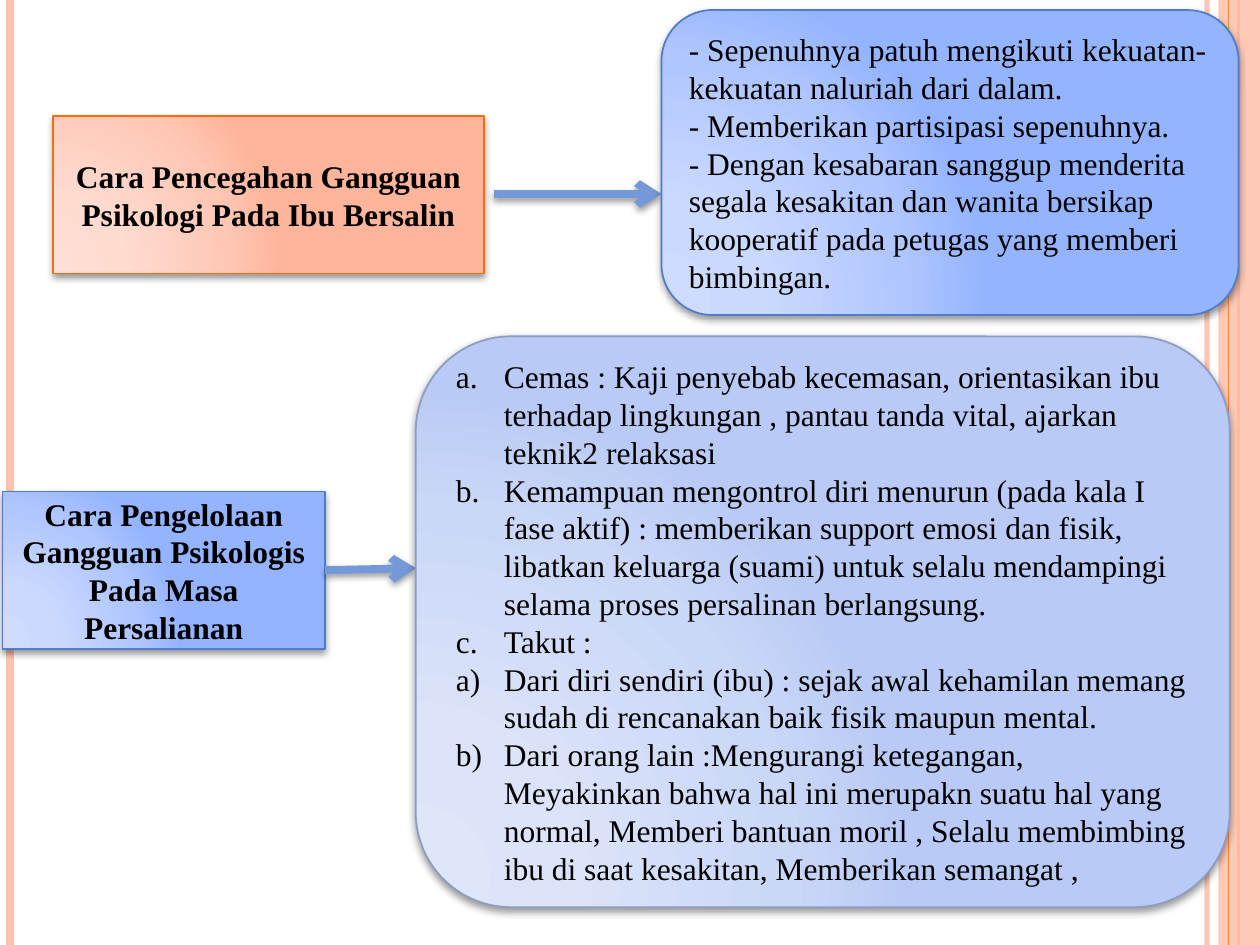
from lxml import etree
from pptx import Presentation, util as u
from pptx.dml.color import RGBColor
from pptx.enum import shapes, text
from pptx.oxml import parse_xml
from pptx.oxml.ns import nsdecls, qn

FONT = "Times New Roman"
COLORS = {"text": "000000", "stripe": "FEC3AE", "rule": "FE8637", "arrow": "7598D9"}
STOPS = (0, 30, 75, 100)
STYLES = {  # gradient colours, outline
    "orange": (("FFDED5", "FFDBD0", "FFC8B6", "FFB59B"), "FF6B0A"),
    "blue": (("CFDCFF", "CBD9FF", "AFC6FF", "95B4FF"), "4F7CCF"),
    "pale": (("DEE6FA", "DBE4F9", "CAD7F7", "B8CAF5"), "8D9CBF"),
}
RULES = [  # x, colour, width, opacity
    (9.58, "stripe", 3, 93),
    (0.08, "stripe", 4.5, 100),
    (9.83, "rule", 1.5, 100),
]
EDGE_RULE = (9.75, "rule", 0.75, 100)

PREVENTION = "Cara Pencegahan Gangguan Psikologi Pada Ibu Bersalin"
MANAGEMENT = "Cara Pengelolaan Gangguan Psikologis Pada Masa Persalianan"
PREVENTION_STEPS = [
    "- Sepenuhnya patuh mengikuti kekuatan-kekuatan naluriah dari dalam.",
    "- Memberikan partisipasi sepenuhnya.",
    "- Dengan kesabaran sanggup menderita segala kesakitan dan wanita bersikap "
    "kooperatif pada petugas yang memberi bimbingan.",
]
LETTERED = [
    "Cemas : Kaji penyebab kecemasan, orientasikan ibu terhadap lingkungan , "
    "pantau tanda vital, ajarkan teknik2 relaksasi",
    "Kemampuan mengontrol diri menurun (pada kala I fase aktif) : memberikan "
    "support emosi dan fisik, libatkan keluarga (suami) untuk selalu mendampingi "
    "selama proses persalinan berlangsung.",
    "Takut :",
]
FEARS = [
    "Dari diri sendiri (ibu) : sejak awal kehamilan memang sudah di rencanakan "
    "baik fisik maupun mental.",
    "Dari orang lain :Mengurangi ketegangan, Meyakinkan bahwa hal ini merupakn "
    "suatu hal yang normal, Memberi bantuan moril , Selalu membimbing ibu di saat "
    "kesakitan, Memberikan semangat ,",
]


def rgb(name):
    return RGBColor.from_string(COLORS.get(name, name))


def set_alpha(fill, percent):
    color = fill._xPr.find(".//" + qn("a:srgbClr"))
    etree.SubElement(color, qn("a:alpha"), val=str(percent * 1000))


def set_gradient(sp, colors):
    """Radial gradient centred below the lower left corner."""
    stops = "".join(f'<a:gs pos="{pos * 1000}"><a:srgbClr val="{c}"/></a:gs>'
                    for pos, c in zip(STOPS, colors))
    sp.fill.background()
    spPr = sp._element.spPr
    spPr.replace(spPr.find(qn("a:noFill")), parse_xml(
        f'<a:gradFill {nsdecls("a")} rotWithShape="1"><a:gsLst>{stops}</a:gsLst>'
        '<a:path path="circle"><a:fillToRect l="5000" t="100000" r="120000" b="10000"/>'
        '</a:path></a:gradFill>'))


def set_effects(sp, shadow=True):
    effects = etree.SubElement(sp._element.spPr, qn("a:effectLst"))
    if shadow:
        effects.append(parse_xml(
            f'<a:outerShdw {nsdecls("a")} blurRad="{u.Pt(4)}" dist="{u.Pt(2)}" '
            'dir="5400000" rotWithShape="0"><a:srgbClr val="000000">'
            '<a:alpha val="40000"/></a:srgbClr></a:outerShdw>'))


def add_line(s, start, end, color, width):
    line = s.shapes.add_connector(shapes.MSO_CONNECTOR.STRAIGHT,
                                  *map(u.Inches, start + end))
    line.line.color.rgb = rgb(color)
    line.line.width = u.Pt(width)
    return line


def add_rule(s, x, color, width, opacity):
    rule = add_line(s, (x, 0), (x, 7.5), color, width)
    set_effects(rule, shadow=False)
    if opacity < 100:
        set_alpha(rule.line.fill, opacity)


def add_arrow(s, start, end):
    arrow = add_line(s, start, end, "arrow", 4.5)
    etree.SubElement(arrow.line._get_or_add_ln(), qn("a:tailEnd"), type="arrow")
    set_effects(arrow)
    return arrow


def add_box(s, kind, box, style):
    sp = s.shapes.add_shape(kind, *map(u.Inches, box))
    colors, outline = STYLES[style]
    set_gradient(sp, colors)
    sp.line.color.rgb = rgb(outline)
    sp.line.width = u.Pt(1)
    set_effects(sp)
    sp.text_frame.word_wrap = True
    sp.text_frame.vertical_anchor = text.MSO_ANCHOR.MIDDLE
    return sp


def write(sp, content, bold=False, align=text.PP_ALIGN.LEFT, numbering=None):
    tf = sp.text_frame
    p = tf.add_paragraph() if tf.text else tf.paragraphs[0]
    p.alignment = align
    r = p.add_run()
    r.text = content
    r.font.name, r.font.size, r.font.bold = FONT, u.Pt(18), bold
    r.font.color.rgb = rgb("text")
    if numbering:
        pPr = p._p.get_or_add_pPr()
        indent = u.Inches(0.38)
        pPr.set("marL", str(indent))
        pPr.set("indent", str(-indent))
        etree.SubElement(pPr, qn("a:buFont"), typeface="+mj-lt")
        etree.SubElement(pPr, qn("a:buAutoNum"), type=numbering)


def main():
    prs = Presentation()
    prs.slide_width, prs.slide_height = u.Inches(10), u.Inches(7.5)
    s = prs.slides.add_slide(prs.slide_layouts[6])

    for rule in RULES:
        add_rule(s, *rule)
    rect, rounded = shapes.MSO_SHAPE.RECTANGLE, shapes.MSO_SHAPE.ROUNDED_RECTANGLE
    band = s.shapes.add_shape(rect, *map(u.Inches, (9.67, 0, 0.33, 7.5)))
    band.fill.solid()
    band.fill.fore_color.rgb = rgb("stripe")
    set_alpha(band.fill, 87)
    band.line.fill.background()
    band.shadow.inherit = False
    add_rule(s, *EDGE_RULE)

    prevention = add_box(s, rect, (0.42, 0.92, 3.42, 1.25), "orange")
    management = add_box(s, rect, (0.02, 3.9, 2.56, 1.25), "blue")
    for sp, heading in ((prevention, PREVENTION), (management, MANAGEMENT)):
        write(sp, heading, bold=True, align=text.PP_ALIGN.CENTER)

    add_arrow(s, (3.92, 1.54), (5.25, 1.54))
    add_arrow(s, (2.58, 4.52), (3.3, 4.51)).begin_connect(management, 3)

    steps = add_box(s, rounded, (5.25, 0.08, 4.58, 2.42), "blue")
    for step in PREVENTION_STEPS:
        write(steps, step)
    care = add_box(s, rounded, (3.3, 2.67, 6.46, 4.53), "pale")
    for items, numbering in ((LETTERED, "alphaLcPeriod"), (FEARS, "alphaLcParenR")):
        for item in items:
            write(care, item, numbering=numbering)

    prs.save("out.pptx")


if __name__ == "__main__":
    main()
